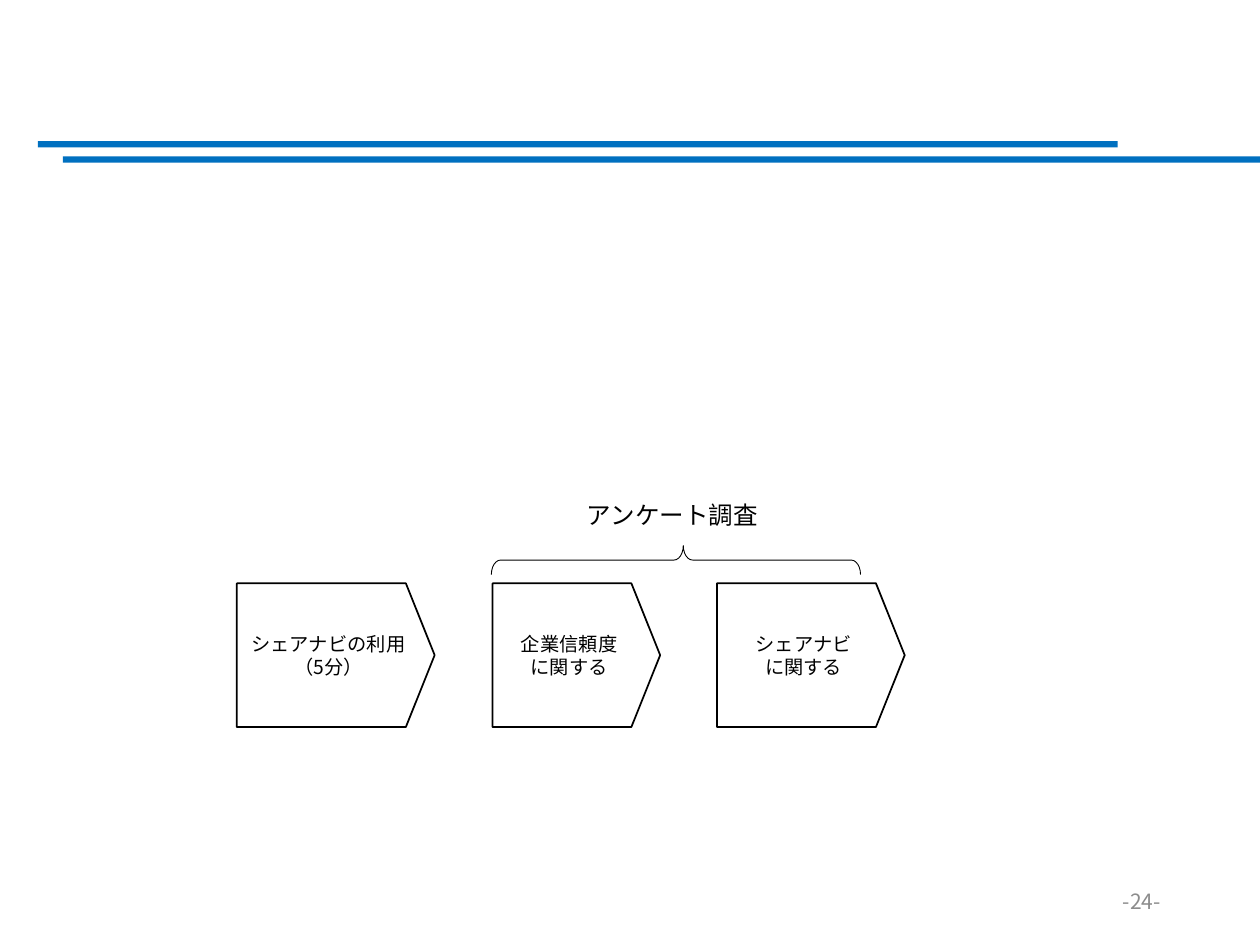
import pptx
import pptx.dml.color
import pptx.enum.shapes
import pptx.enum.text
import pptx.oxml
import pptx.oxml.ns
import pptx.util
from pptx.util import Inches

SHAPE = pptx.enum.shapes.MSO_SHAPE
ALIGN = pptx.enum.text.PP_ALIGN
ANCHOR = pptx.enum.text.MSO_ANCHOR


def color(value):
    return pptx.dml.color.RGBColor.from_string(value)


class SlideBuilder:
    font_name = "Noto Sans CJK JP"
    ink = "000000"
    accent = "0070C0"
    muted = "8C8C8C"

    def __init__(self, page):
        self.page = page

    def set_text(self, box, lines, size, ink, align, anchor):
        frame = box.text_frame
        frame.word_wrap = True
        frame.vertical_anchor = anchor
        frame.text = "\n".join(lines)
        for para in frame.paragraphs:
            para.alignment = align
            para.font.size = pptx.util.Pt(size)
            para.font.color.rgb = color(ink)
            para.font.name = self.font_name
            defaults = para._p.pPr.find(pptx.oxml.ns.qn("a:defRPr"))
            east_asian = pptx.oxml.parse_xml(
                f'<a:ea {pptx.oxml.ns.nsdecls("a")} typeface="{self.font_name}"/>'
            )
            defaults.append(east_asian)

    def label(self, left, top, width, height, text, size, ink=ink,
              align=ALIGN.LEFT, anchor=ANCHOR.TOP):
        box = self.page.shapes.add_textbox(
            Inches(left), Inches(top), Inches(width), Inches(height))
        self.set_text(box, [text], size, ink, align, anchor)

    def shape(self, kind, left, top, width, height, adjustments=()):
        box = self.page.shapes.add_shape(
            kind, Inches(left), Inches(top), Inches(width), Inches(height))
        box.shadow.inherit = False
        for index, value in enumerate(adjustments):
            box.adjustments[index] = value
        return box

    def rule(self, left, top, width):
        bar = self.shape(SHAPE.RECTANGLE, left, top, width, 0.05)
        bar.fill.solid()
        bar.fill.fore_color.rgb = color(self.accent)
        bar.line.fill.background()

    def outline(self, box, weight):
        box.fill.background()
        box.line.color.rgb = color(self.ink)
        box.line.width = pptx.util.Pt(weight)

    def step(self, left, width, lines):
        box = self.shape(SHAPE.PENTAGON, left, 4.63, width, 1.14, [0.2])
        self.outline(box, 1)
        self.set_text(box, lines, 11, self.ink, ALIGN.CENTER, ANCHOR.MIDDLE)

    def brace(self, left, top, width, height):
        box = self.shape(SHAPE.RIGHT_BRACE, left, top, width, height, [0.32, 0.52])
        box.rotation = 270
        self.outline(box, 0.5)


def main():
    deck = pptx.Presentation()
    deck.slide_width = Inches(10)
    deck.slide_height = Inches(7.5)
    slide = SlideBuilder(deck.slides.add_slide(deck.slide_layouts[6]))

    slide.rule(0.3, 1.12, 8.57)
    slide.rule(0.5, 1.24, 9.5)
    slide.label(7.06, 6.95, 2.25, 0.4, "-24-", 12, slide.muted,
                ALIGN.RIGHT, ANCHOR.MIDDLE)

    steps = [
        (1.88, 1.57, ["シェアナビの利用", "（5分）"]),
        (3.91, 1.33, ["企業信頼度", "に関する"]),
        (5.69, 1.49, ["シェアナビ", "に関する"]),
    ]
    for left, width, lines in steps:
        slide.step(left, width, lines)

    slide.brace(5.25, 2.98, 0.23, 2.93)
    slide.label(4.56, 3.92, 1.88, 0.34, "アンケート調査", 14)

    deck.save("out.pptx")


if __name__ == "__main__":
    main()
